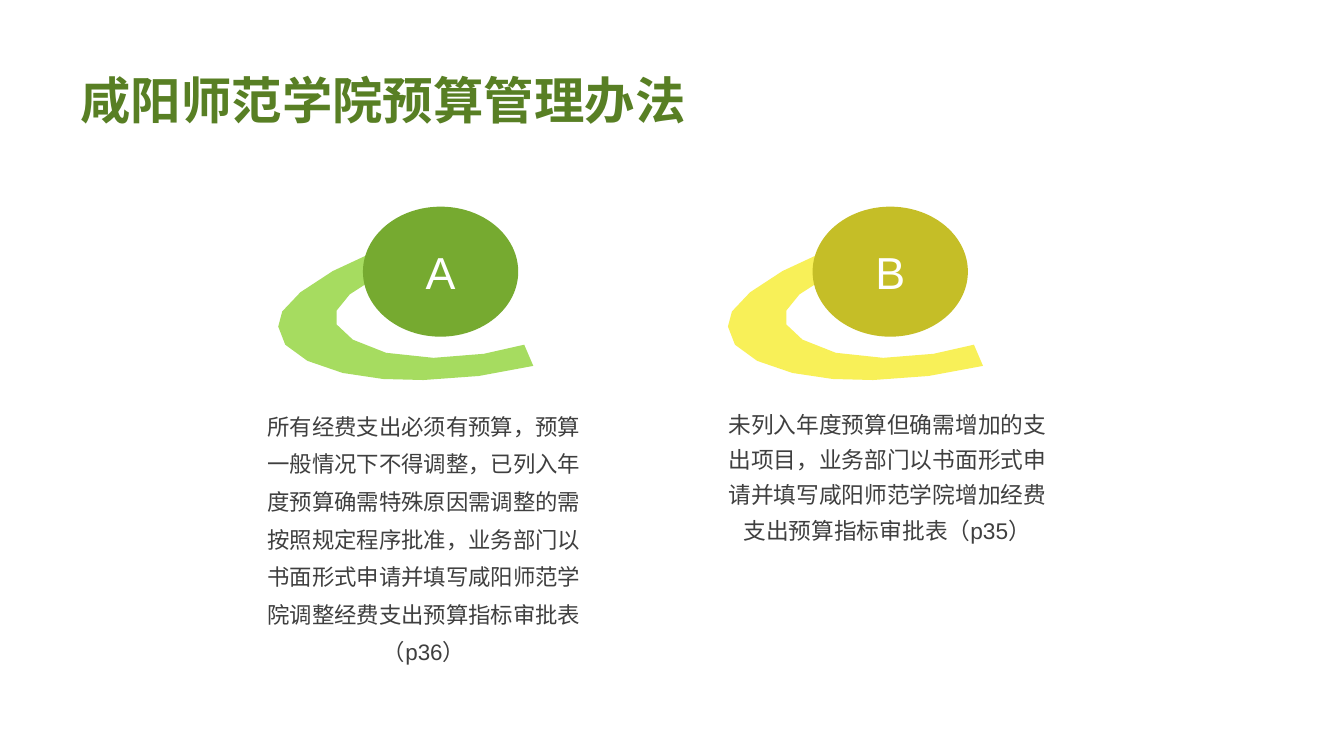
from dataclasses import dataclass

from pptx import Presentation
from pptx.dml.color import RGBColor
from pptx.enum.shapes import MSO_SHAPE
from pptx.enum.text import MSO_ANCHOR, PP_ALIGN
from pptx.util import Inches, Pt

OVAL = MSO_SHAPE.OVAL
TOP, MIDDLE, BOTTOM = MSO_ANCHOR.TOP, MSO_ANCHOR.MIDDLE, MSO_ANCHOR.BOTTOM
LEFT, CENTER = PP_ALIGN.LEFT, PP_ALIGN.CENTER


@dataclass(frozen=True)
class Theme:
    font: str = "Arial"
    title: str = "587F24"
    body: str = "3F3F3F"
    white: str = "FFFFFF"
    green: str = "76AA30"
    light_green: str = "A6DC60"
    gold: str = "C5BE27"
    light_yellow: str = "F8F058"
    title_size: float = 36
    letter_size: float = 32
    body_size: float = 16
    wide_body_size: float = 16.2


THEME = Theme()
SWOOSH = [
    (3.75, 2.48), (3.3, 2.69), (2.98, 2.9), (2.8, 3.09), (2.76, 3.24),
    (2.83, 3.42), (3.05, 3.58), (3.4, 3.7), (3.8, 3.76), (4.2, 3.77),
    (4.75, 3.73), (5.29, 3.63), (5.2, 3.42), (4.8, 3.51), (4.3, 3.55),
    (3.83, 3.5), (3.5, 3.37), (3.34, 3.22), (3.34, 3.08), (3.47, 2.92),
    (3.75, 2.74),
]
ITEM_PITCH = 4.46
ITEMS = [
    {
        "letter": "A", "fill": THEME.green, "swoosh": THEME.light_green,
        "text": "所有经费支出必须有预算，预算一般情况下不得调整，已列入年度预算确需特殊原因需调整的需按照规定程序批准，业务部门以书面形式申请并填写咸阳师范学院调整经费支出预算指标审批表（p36）",
        "box": (2.62, 3.99, 3.17, 2.64), "size": THEME.body_size, "spacing": 1.4,
    },
    {
        "letter": "B", "fill": THEME.gold, "swoosh": THEME.light_yellow,
        "text": "未列入年度预算但确需增加的支出项目，业务部门以书面形式申请并填写咸阳师范学院增加经费支出预算指标审批表（p35）",
        "box": (7.22, 3.99, 3.16, 2.64), "size": THEME.wide_body_size, "spacing": 1.3,
    },
]


def apply_format(target, values):
    for name, value in values.items():
        setattr(target, name, value)


def write_text(shape, text, size, color, align, anchor, spacing=None, bold=None, inset=None):
    frame = shape.text_frame
    apply_format(frame, {"word_wrap": True, "vertical_anchor": anchor})
    if inset is not None:
        sides = ("margin_left", "margin_top", "margin_right", "margin_bottom")
        apply_format(frame, dict.fromkeys(sides, Inches(inset)))
    para = frame.paragraphs[0]
    apply_format(para, {"alignment": align, "line_spacing": spacing})
    span = para.add_run()
    span.text = text
    apply_format(span.font, {"name": THEME.font, "size": Pt(size), "bold": bold})
    span.font.color.rgb = RGBColor.from_string(color)


def paint(shape, color):
    shape.shadow.inherit = False
    shape.fill.solid()
    shape.fill.fore_color.rgb = RGBColor.from_string(color)
    shape.line.fill.background()


def add_text(page, bounds, text, size, color, **options):
    box = page.shapes.add_textbox(*map(Inches, bounds))
    write_text(box, text, size, color, **options)


def add_swoosh(page, offset, color):
    corners = [(Inches(x + offset), Inches(y)) for x, y in SWOOSH]
    outline = page.shapes.build_freeform(*corners[0])
    outline.add_line_segments(corners[1:], close=True)
    paint(outline.convert_to_shape(), color)


def add_letter(page, offset, letter, color):
    circle = page.shapes.add_shape(OVAL, *map(Inches, (3.6 + offset, 2.05, 1.54, 1.29)))
    paint(circle, color)
    write_text(circle, letter, THEME.letter_size, THEME.white, align=CENTER, anchor=MIDDLE)


def main():
    deck = Presentation()
    apply_format(deck, {"slide_width": Inches(13.33), "slide_height": Inches(7.5)})
    page = deck.slides.add_slide(deck.slide_layouts[6])
    for index, item in enumerate(ITEMS):
        offset = index * ITEM_PITCH
        add_swoosh(page, offset, item["swoosh"])
        add_letter(page, offset, item["letter"], item["fill"])
    for item in ITEMS:
        add_text(page, item["box"], item["text"], item["size"], THEME.body,
                 align=CENTER, anchor=TOP, spacing=item["spacing"], inset=0)
    add_text(page, (0.7, 0.42, 9.04, 0.92), "咸阳师范学院预算管理办法", THEME.title_size,
             THEME.title, align=LEFT, anchor=BOTTOM, spacing=0.9, bold=True)
    deck.save("out.pptx")


if __name__ == "__main__":
    main()
